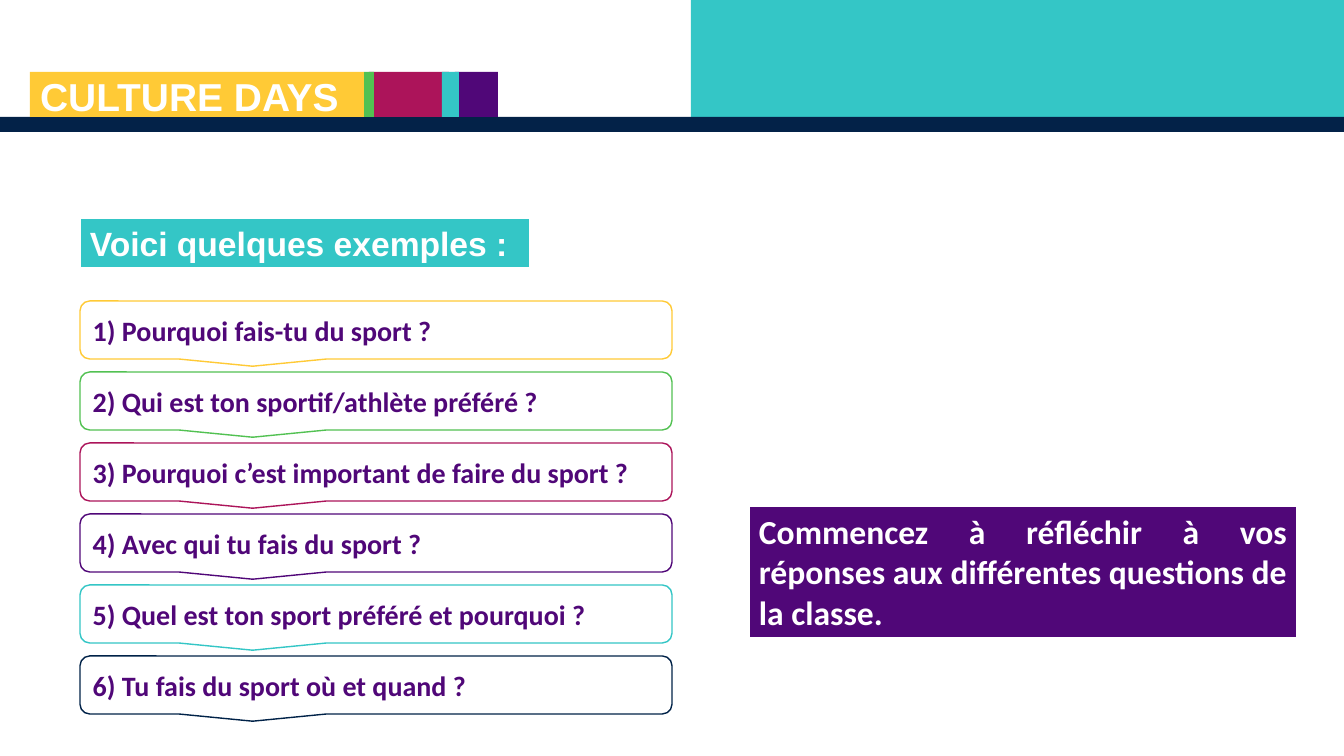
from pptx import Presentation, util as u
from pptx.dml.color import RGBColor
from pptx.enum import shapes, text

# Content
TEAL, NAVY, PLUM, ROSE = "34C6C6", "032248", "500778", "AC145A"
GREEN, GOLD, WHITE = "52C152", "FFCA36", "FFFFFF"

TITLE = "CULTURE DAYS"
INTRO = "Voici quelques exemples :"
TASK = "Commencez à réfléchir à vos réponses aux différentes questions de la classe."
ASKS = [
    ("Pourquoi fais-tu du sport ?", GOLD),
    ("Qui est ton sportif/athlète préféré ?", GREEN),
    ("Pourquoi c’est important de faire du sport ?", ROSE),
    ("Avec qui tu fais du sport ?", PLUM),
    ("Quel est ton sport préféré et pourquoi ?", TEAL),
    ("Tu fais du sport où et quand ?", "002248"),
]
BANDS = [  # left, top, width, height, fill
    (691, 0, 653, 117, TEAL),
    (0, 117, 1344, 15, NAVY),
]
TABS = [(455, 43, PLUM), (369, 80, ROSE), (442, 17, TEAL),
        (364, 10, GREEN), (30, 334, GOLD)]  # left, width, fill
BANDS += [(x, 72, w, 45, fill) for x, w, fill in TABS]

SCALE = 914400 / 100.8
RECT = shapes.MSO_SHAPE.RECTANGLE
CALL = shapes.MSO_SHAPE.ROUNDED_RECTANGULAR_CALLOUT
MID, TOP = text.MSO_ANCHOR.MIDDLE, text.MSO_ANCHOR.TOP
LEFT, FULL = text.PP_ALIGN.LEFT, text.PP_ALIGN.JUSTIFY


def px(n):
    return round(n * SCALE)


def rgb(code):
    return RGBColor.from_string(code)


def write(shape, words, size=24, font="Calibri", color=WHITE,
          anchor=TOP, align=LEFT, lead=1.0):
    frame = shape.text_frame
    frame.word_wrap = True
    frame.auto_size = text.MSO_AUTO_SIZE.NONE
    frame.vertical_anchor = anchor
    para = frame.paragraphs[0]
    para.alignment = align
    para.line_spacing = lead
    run = para.add_run()
    run.text = words
    run.font.name = font
    run.font.size = u.Pt(size)
    run.font.bold = True
    run.font.color.rgb = rgb(color)


def draw(kind, x, y, w, h, fill, line=None, width=1):
    shape = slide.shapes.add_shape(kind, px(x), px(y), px(w), px(h))
    shape.shadow.inherit = False
    shape.fill.solid()
    shape.fill.fore_color.rgb = rgb(fill)
    if line:
        shape.line.color.rgb = rgb(line)
        shape.line.width = u.Pt(width)
    else:
        shape.line.fill.background()
    return shape


deck = Presentation()
deck.slide_width, deck.slide_height = px(1344), px(756)
slide = deck.slides.add_slide(deck.slide_layouts[5])

# Header bands and title
for x, y, w, h, fill in BANDS:
    draw(RECT, x, y, w, h, fill)
title = slide.shapes.title
title.left, title.top, title.width, title.height = map(px, (30, 76, 418, 48))
write(title, TITLE, size=27.8, font="Arial", anchor=MID, lead=0.8)
title.element.getparent().append(title.element)  # in front of the bands

# Intro label
label = draw(RECT, 80, 218, 450, 50, TEAL, WHITE, 1.5)
write(label, INTRO, font="Arial")

# Question callouts
for i, (ask, line) in enumerate(ASKS):
    box = draw(CALL, 80, 301 + 71 * i, 592, 58, WHITE, line)
    write(box, f"{i + 1}) {ask}", size=20, color=PLUM, anchor=MID)

# Task for the class
task = draw(RECT, 749, 506, 548, 132, PLUM, WHITE, 1.5)
write(task, TASK, align=FULL)

deck.save("out.pptx")
